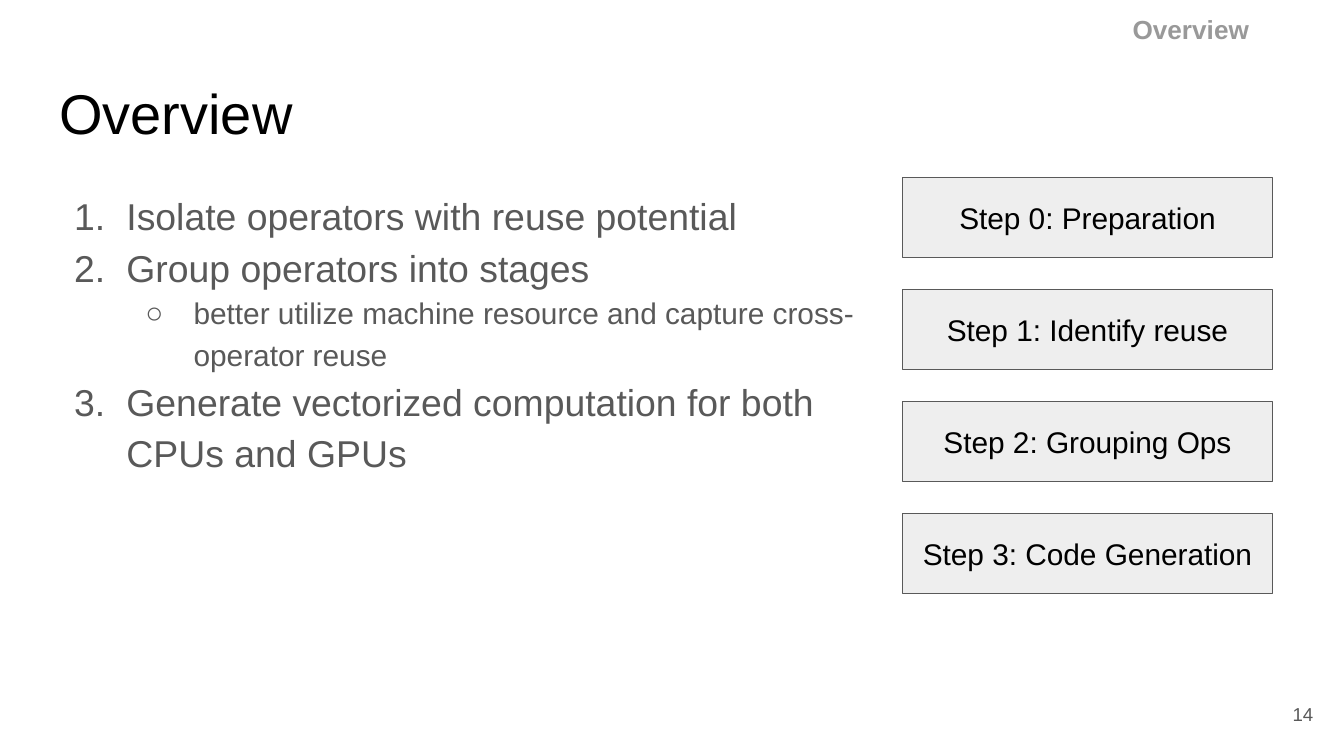
from dataclasses import dataclass

from lxml.etree import SubElement
from pptx import Presentation
from pptx.dml.color import RGBColor
from pptx.enum.shapes import MSO_SHAPE
from pptx.enum.text import MSO_ANCHOR, PP_ALIGN
from pptx.oxml.ns import qn
from pptx.util import Cm, Pt


@dataclass(frozen=True)
class Theme:
    font: str = "Arial"
    black: str = "000000"
    body: str = "595959"
    muted: str = "999999"
    panel: str = "EEEEEE"
    title_size: int = 30
    point_size: int = 20
    detail_size: int = 16
    section_size: int = 14
    number_size: int = 10
    inset: float = 0.25


THEME = Theme()

# (level, text)
POINTS = [
    (0, "Isolate operators with reuse potential"),
    (0, "Group operators into stages"),
    (1, "better utilize machine resource and capture cross-operator reuse"),
    (0, "Generate vectorized computation for both CPUs and GPUs"),
]
STEPS = ["Preparation", "Identify reuse", "Grouping Ops", "Code Generation"]


def prepare_frame(frame, anchor=MSO_ANCHOR.TOP):
    frame.word_wrap = True
    frame.vertical_anchor = anchor
    frame.margin_left = frame.margin_right = Cm(THEME.inset)
    frame.margin_top = frame.margin_bottom = Cm(THEME.inset)
    return frame


def add_run(paragraph, text, size, color, bold=False):
    run = paragraph.add_run()
    run.text = text
    run.font.name = THEME.font
    run.font.size = Pt(size)
    run.font.bold = bold
    run.font.color.rgb = RGBColor.from_string(color)


def add_label(slide, box, text, size, color, bold=False,
              align=PP_ALIGN.LEFT, anchor=MSO_ANCHOR.TOP):
    label = slide.shapes.add_textbox(*map(Cm, box))
    paragraph = prepare_frame(label.text_frame, anchor).paragraphs[0]
    paragraph.alignment = align
    add_run(paragraph, text, size, color, bold)


def set_marker(paragraph, level):
    """Number the main points and give their details a hollow bullet."""
    indent, hanging = ((1.27, 0.99), (2.54, 0.91))[level]
    properties = paragraph._p.get_or_add_pPr()
    properties.set("marL", str(Cm(indent)))
    properties.set("indent", str(-Cm(hanging)))
    color = SubElement(properties, qn("a:buClr"))
    SubElement(color, qn("a:srgbClr"), val=THEME.body)
    SubElement(properties, qn("a:buFont"), typeface=THEME.font)
    if level == 0:
        SubElement(properties, qn("a:buAutoNum"), type="arabicPeriod")
    else:
        SubElement(properties, qn("a:buChar"), char="○")


def add_points(slide, box):
    outline = slide.shapes.add_textbox(*map(Cm, box))
    frame = prepare_frame(outline.text_frame)
    for index, (level, text) in enumerate(POINTS):
        point = frame.add_paragraph() if index else frame.paragraphs[0]
        set_marker(point, level)
        point.level = level
        point.line_spacing = 1.15
        size = THEME.detail_size if level else THEME.point_size
        add_run(point, text, size, THEME.body)


def add_steps(slide, box, step_height=1.51):
    left, top, width, height = box
    pitch = (height - step_height) / (len(STEPS) - 1)
    for index, name in enumerate(STEPS):
        step = slide.shapes.add_shape(
            MSO_SHAPE.RECTANGLE, Cm(left), Cm(top + index * pitch),
            Cm(width), Cm(step_height))
        step.shadow.inherit = False
        step.fill.solid()
        step.fill.fore_color.rgb = RGBColor.from_string(THEME.panel)
        step.line.color.rgb = RGBColor.from_string(THEME.body)
        step.line.width = Pt(0.75)
        frame = prepare_frame(step.text_frame, MSO_ANCHOR.MIDDLE)
        paragraph = frame.paragraphs[0]
        paragraph.alignment = PP_ALIGN.CENTER
        add_run(paragraph, f"Step {index}: {name}", THEME.detail_size, THEME.black)


def main():
    deck = Presentation()
    deck.slide_width, deck.slide_height = Cm(25.4), Cm(14.29)
    slide = deck.slides.add_slide(deck.slide_layouts[6])

    # Title and outline
    add_label(slide, (0.87, 1.24, 23.67, 1.7), "Overview",
              THEME.title_size, THEME.black)
    add_points(slide, (0.87, 3.28, 16.2, 9.42))

    # Section name and page number
    add_label(slide, (19.61, 0, 5.79, 1.09), "Overview", THEME.section_size,
              THEME.muted, bold=True, align=PP_ALIGN.CENTER)
    add_label(slide, (23.55, 12.95, 1.52, 1.09), "14", THEME.number_size,
              THEME.body, align=PP_ALIGN.RIGHT, anchor=MSO_ANCHOR.MIDDLE)

    # Column of steps
    add_steps(slide, (17.06, 3.36, 6.99, 7.86))

    deck.save("out.pptx")


if __name__ == "__main__":
    main()
